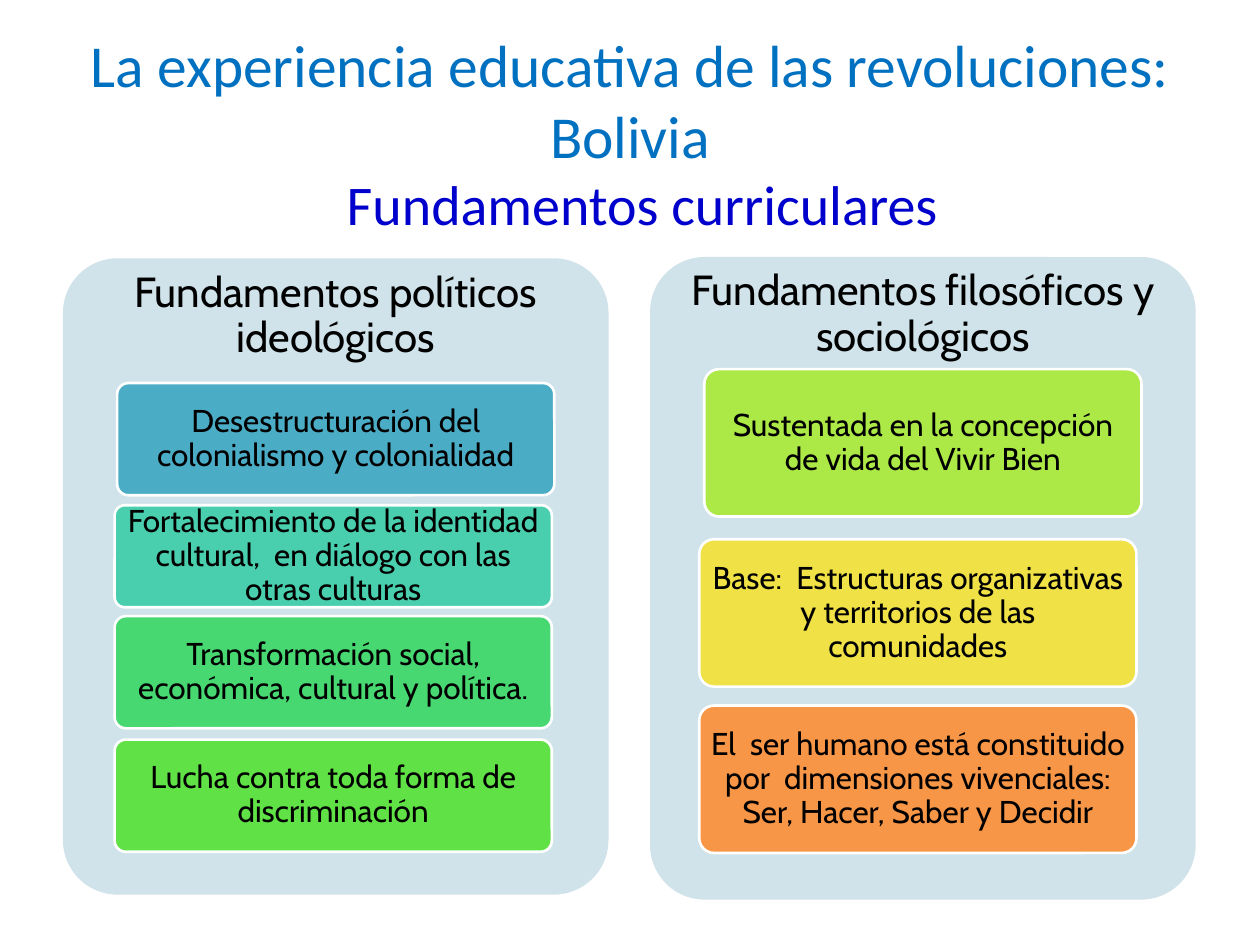
from pptx import Presentation
from pptx.dml.color import RGBColor
from pptx.enum.shapes import MSO_SHAPE as Preset
from pptx.enum.text import MSO_ANCHOR as Anchor, MSO_AUTO_SIZE as AutoSize, PP_ALIGN as Align
from pptx.oxml.ns import qn
from pptx.util import Inches, Pt
from lxml import etree

PANEL_WIDTH, CARD_WIDTH = 4.33, 3.47
PANEL_FILL = "D0E3EA"

# Panel: heading, left, top, height; cards: text, left, top, height, fill
PANELS = [
    ("Fundamentos políticos ideológicos", 0.5, 2.05, 5.05, [
        ("Desestructuración del colonialismo y colonialidad", 0.93, 3.04, 0.89, "4BACC6"),
        ("Fortalecimiento de la identidad cultural,  en diálogo con las otras culturas",
         0.91, 4.01, 0.81, "49CFAE"),
        ("Transformación social, económica, cultural y política.", 0.91, 4.89, 0.89, "47D872"),
        ("Lucha contra toda forma de discriminación", 0.91, 5.87, 0.89, "60E146"),
    ]),
    ("Fundamentos filosóficos y sociológicos", 5.16, 2.04, 5.1, [
        ("Sustentada en la concepción de vida del Vivir Bien", 5.59, 2.93, 1.17, "ACE946"),
        ("Base:  Estructuras organizativas y territorios de las comunidades",
         5.55, 4.28, 1.17, "F0E146"),
        ("El  ser humano está constituido por  dimensiones vivenciales: "
         "Ser, Hacer, Saber y Decidir", 5.55, 5.6, 1.17, "F79646"),
    ]),
]


def color(value):
    return RGBColor.from_string(value)


def write(frame, text, size, font, ink, anchor=Anchor.TOP, spacing=None):
    """Fill a text frame with one centred paragraph."""
    frame.word_wrap = True
    frame.auto_size = AutoSize.NONE
    frame.vertical_anchor = anchor
    frame.text = text
    para = frame.paragraphs[0]
    para.alignment = Align.CENTER
    if spacing:
        para.line_spacing = spacing
    para.font.size = Pt(size)
    para.font.name = font
    para.font.color.rgb = color(ink)
    return para


def set_margins(frame, side, top):
    frame.margin_left = frame.margin_right = Inches(side)
    frame.margin_top = frame.margin_bottom = Inches(top)


def number_paragraph(para, start, indent):
    """Give a paragraph a hanging letter such as c)."""
    props = para._p.get_or_add_pPr()
    props.set("marL", str(Inches(indent)))
    props.set("indent", str(-Inches(indent)))
    etree.SubElement(props, qn("a:buFont"), typeface="+mj-lt")
    etree.SubElement(props, qn("a:buAutoNum"), type="alphaLcParenR", startAt=str(start))


def add_title(slide):
    title = slide.shapes.title
    title.left, title.top = Inches(0.55), Inches(1.29)
    title.width, title.height = Inches(9.1), Inches(0.65)
    write(title.text_frame, "Fundamentos curriculares", 32, "Calibri", "0000CC", Anchor.MIDDLE)


def add_section_heading(slide):
    box = slide.shapes.add_textbox(Inches(0), Inches(0.17), Inches(10), Inches(1.14))
    frame = box.text_frame
    number_paragraph(frame.paragraphs[0], 3, 0.56)
    write(frame, "La experiencia educativa de las revoluciones: Bolivia", 34, "Calibri", "0070C0")


def add_rounded(slide, left, top, width, height, fill):
    shape = slide.shapes.add_shape(Preset.ROUNDED_RECTANGLE, Inches(left), Inches(top),
                                   Inches(width), Inches(height))
    shape.adjustments[0] = 0.1
    shape.shadow.inherit = False
    shape.fill.solid()
    shape.fill.fore_color.rgb = color(fill)
    shape.line.fill.background()
    return shape


def add_card(slide, text, left, top, height, fill):
    card = add_rounded(slide, left, top, CARD_WIDTH, height, fill)
    card.line.color.rgb = color("FFFFFF")
    card.line.width = Pt(1.5)
    set_margins(card.text_frame, 0.05, 0.04)
    write(card.text_frame, text, 18, "Cabin", "000000", Anchor.MIDDLE, 0.9)


def add_panel(slide, heading, left, top, height, cards):
    add_rounded(slide, left, top, PANEL_WIDTH, height, PANEL_FILL)
    # The heading takes the top 30 % of the panel
    box = slide.shapes.add_textbox(Inches(left), Inches(top),
                                   Inches(PANEL_WIDTH), Inches(height * 0.3))
    set_margins(box.text_frame, 0.1, 0.1)
    write(box.text_frame, heading, 24, "Cabin", "000000", spacing=0.9)
    for card in cards:
        add_card(slide, *card)


def main():
    deck = Presentation()
    deck.slide_width, deck.slide_height = Inches(10), Inches(7.5)
    slide = deck.slides.add_slide(deck.slide_layouts[5])
    add_title(slide)
    add_section_heading(slide)
    for panel in PANELS:
        add_panel(slide, *panel)
    deck.save("out.pptx")


if __name__ == "__main__":
    main()
